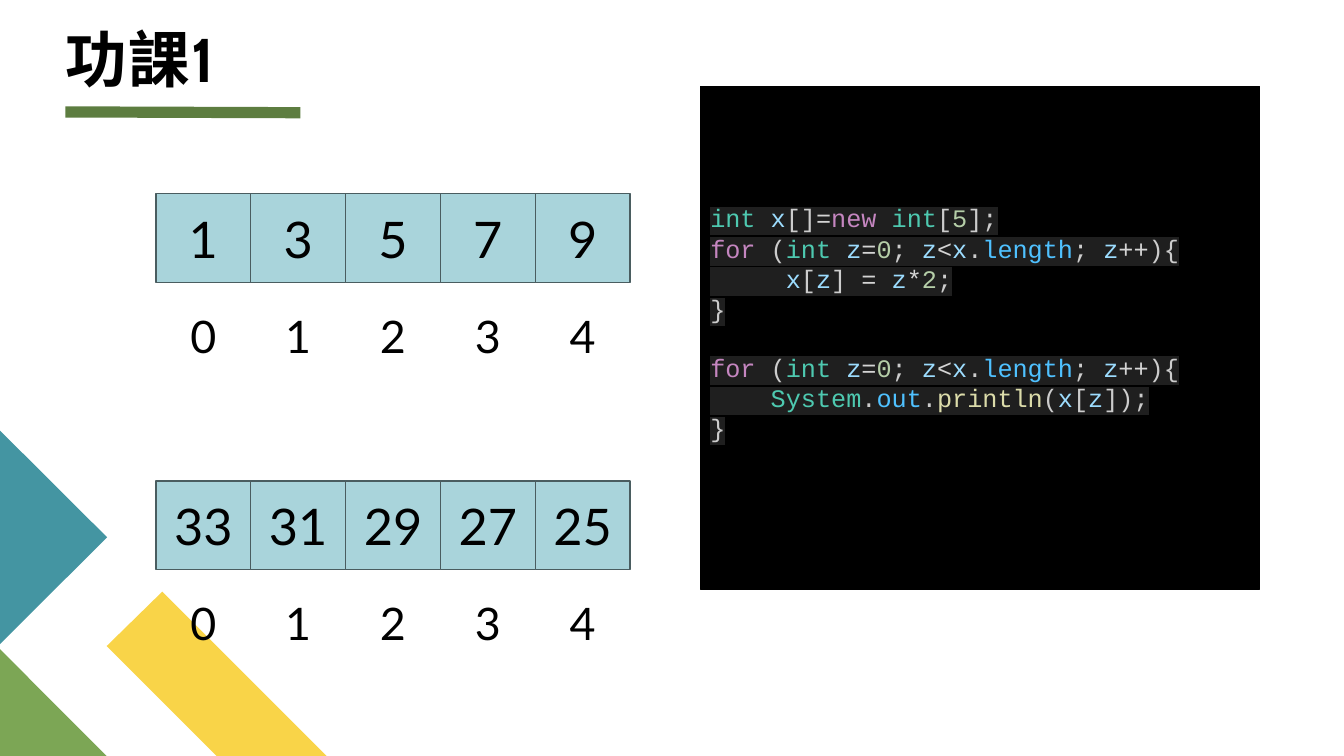
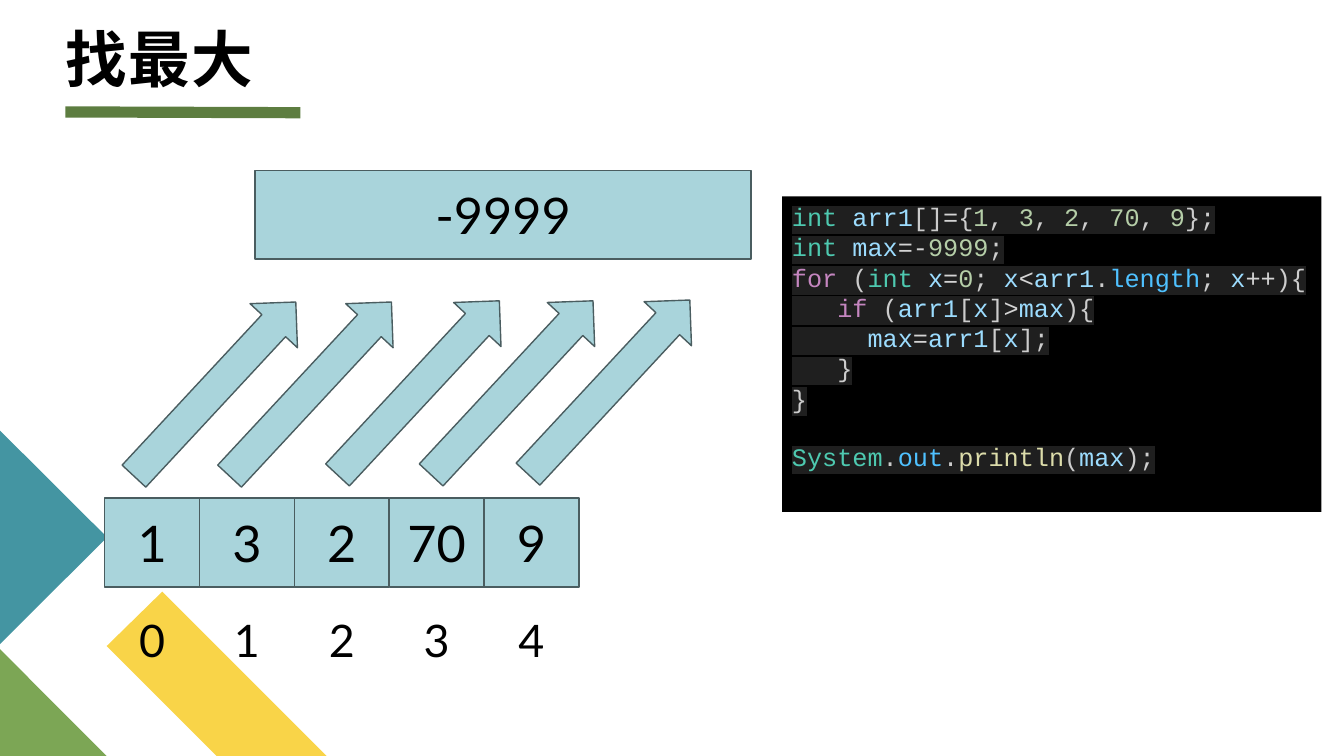
from itertools import groupby

from lxml.etree import SubElement
from pptx import Presentation
from pptx.dml.color import RGBColor
from pptx.enum.shapes import MSO_CONNECTOR, MSO_SHAPE
from pptx.enum.text import MSO_ANCHOR, MSO_AUTO_SIZE, PP_ALIGN
from pptx.oxml.ns import qn
from pptx.util import Cm, Pt

BLACK = RGBColor(0x00, 0x00, 0x00)
TEAL = RGBColor(0x44, 0x95, 0xA2)
YELLOW = RGBColor(0xF9, 0xD4, 0x48)
GREEN = RGBColor(0x7C, 0xA6, 0x55)
DARK_GREEN = RGBColor(0x5D, 0x7D, 0x40)
PALE_BLUE = RGBColor(0xA9, 0xD4, 0xDB)
SLATE = RGBColor(0x4A, 0x5D, 0x60)

CODE_BACK = RGBColor(0x1F, 0x1F, 0x1F)
CODE_TYPE = RGBColor(0x4E, 0xC9, 0xB0)
CODE_KEYWORD = RGBColor(0xC5, 0x86, 0xC0)
CODE_MEMBER = RGBColor(0x4F, 0xC1, 0xFF)
CODE_METHOD = RGBColor(0xDC, 0xDC, 0xAA)
CODE_NUMBER = RGBColor(0xB5, 0xCE, 0xA8)
CODE_VARIABLE = RGBColor(0x9C, 0xDC, 0xFE)
CODE_OPERATOR = RGBColor(0xD4, 0xD4, 0xD4)
CODE_MARK = RGBColor(0xCC, 0xCC, 0xCC)
WORD_COLOURS = {
    "int": CODE_TYPE, "System": CODE_TYPE,
    "for": CODE_KEYWORD, "if": CODE_KEYWORD, "new": CODE_KEYWORD,
    "length": CODE_MEMBER, "out": CODE_MEMBER, "println": CODE_METHOD,
}

TITLE_FONT, BODY_FONT, CODE_FONT = "Cabin", "Lato", "Courier New"
CELL_WIDTH, CELL_HEIGHT = 2.39, 2.24
INDEX_DROP, INDEX_HEIGHT = 2.77, 1.63
CODE_LINE = Pt(20.4)

DECOR = [
    (YELLOW, [(8.23, 19.05), (5.46, 19.05), (2.69, 16.28), (4.09, 14.91)]),
    (GREEN, [(0, 16.36), (2.69, 19.05), (0, 19.05)]),
    (TEAL, [(0, 10.85), (2.7, 13.54), (0, 16.23)]),
]
ARROWS = [(4.6, 6.81), (7.01, 6.81), (9.73, 6.78), (12.09, 6.78), (14.53, 6.76)]

FILL_CODE = """int x[]=new int[5];
for (int z=0; z<x.length; z++){
     x[z] = z*2;
}

for (int z=0; z<x.length; z++){
    System.out.println(x[z]);
}"""
MAX_CODE = """int arr1[]={1, 3, 2, 70, 9};
int max=-9999;
for (int x=0; x<arr1.length; x++){
   if (arr1[x]>max){
     max=arr1[x];
   }
}

System.out.println(max);"""


def add_span(para, text, size=36, font=BODY_FONT, colour=BLACK, bold=False,
             highlight=None, tracking=None):
    """Append one formatted run to a paragraph."""
    span = para.add_run()
    span.text = text
    span.font.size = Pt(size)
    span.font.name = font
    span.font.bold = bold
    span.font.color.rgb = colour
    props = span.font._element
    if tracking:
        props.set("spc", str(tracking))
    if highlight:
        mark = SubElement(props, qn("a:highlight"))
        SubElement(mark, qn("a:srgbClr")).set("val", str(highlight))
        props.find(qn("a:solidFill")).addnext(mark)


def paint(shape, fill, line=None):
    """Give a shape a flat fill and an optional thin outline."""
    shape.shadow.inherit = False
    shape.fill.solid()
    shape.fill.fore_color.rgb = fill
    if line is None:
        shape.line.fill.background()
    else:
        shape.line.color.rgb = line
        shape.line.width = Pt(1)


def add_shape(page, kind, left, top, width, height, fill=PALE_BLUE, line=SLATE):
    """Draw a painted preset shape, measured in centimetres."""
    shape = page.shapes.add_shape(kind, Cm(left), Cm(top), Cm(width), Cm(height))
    paint(shape, fill, line)
    return shape


def add_value(page, text, left, top, width=CELL_WIDTH):
    """Draw a pale box that holds one centred value."""
    box = add_shape(page, MSO_SHAPE.RECTANGLE, left, top, width, CELL_HEIGHT)
    box.text_frame.vertical_anchor = MSO_ANCHOR.MIDDLE
    para = box.text_frame.paragraphs[0]
    para.alignment = PP_ALIGN.CENTER
    add_span(para, text)


def add_array(page, values, left, top):
    """Draw a row of values with their indices below."""
    for index, value in enumerate(values):
        cell_left = left + index * CELL_WIDTH
        add_value(page, str(value), cell_left, top)
        label = page.shapes.add_textbox(Cm(cell_left), Cm(top + INDEX_DROP),
                                        Cm(CELL_WIDTH), Cm(INDEX_HEIGHT))
        label.text_frame.word_wrap = True
        para = label.text_frame.paragraphs[0]
        para.alignment = PP_ALIGN.CENTER
        add_span(para, str(index), size=32)


def token_kind(letter):
    """Sort a code character into word, operator or mark."""
    if letter.isalnum():
        return "word"
    return "operator" if letter in "=<>+-*" else "mark"


def token_colour(kind, token):
    """Choose the syntax colour of a code token."""
    if kind == "word":
        default = CODE_NUMBER if token.isdigit() else CODE_VARIABLE
        return WORD_COLOURS.get(token, default)
    return CODE_OPERATOR if kind == "operator" else CODE_MARK


def add_code(page, code, left, top, width, height, anchor, bottom=0.13, line=None):
    """Draw a black panel with highlighted source code."""
    panel = add_shape(page, MSO_SHAPE.RECTANGLE, left, top, width, height,
                      fill=BLACK, line=line)
    frame = panel.text_frame
    frame.word_wrap = True
    frame.vertical_anchor = anchor
    frame.margin_bottom = Cm(bottom)
    para = frame.paragraphs[0]
    for block_number, block in enumerate(code.split("\n\n")):
        for line_number, text in enumerate(block.split("\n")):
            if block_number or line_number:
                para = frame.add_paragraph()
            if block_number and not line_number:
                para.space_before = CODE_LINE
            para.alignment = PP_ALIGN.LEFT
            for kind, letters in groupby(text, token_kind):
                token = "".join(letters)
                add_span(para, token, size=18, font=CODE_FONT,
                         colour=token_colour(kind, token), highlight=CODE_BACK)


def add_decor(page):
    """Draw the title rule and the corner shapes."""
    rule = page.shapes.add_connector(MSO_CONNECTOR.STRAIGHT, Cm(1.65), Cm(2.82),
                                     Cm(7.57), Cm(2.84))
    rule.line.color.rgb = DARK_GREEN
    rule.line.width = Pt(8)
    SubElement(rule._element.spPr, qn("a:effectLst"))
    for colour, corners in DECOR:
        points = [(Cm(x), Cm(y)) for x, y in corners]
        outline = page.shapes.build_freeform(*points[0])
        outline.add_line_segments(points[1:])
        paint(outline.convert_to_shape(), colour)


def add_page(deck, title):
    """Start a slide with the shared decor and title style."""
    page = deck.slides.add_slide(deck.slide_layouts[5])
    add_decor(page)
    box = page.shapes.title
    box.left, box.top, box.width, box.height = Cm(1.65), Cm(0.28), Cm(30.2), Cm(2.11)
    frame = box.text_frame
    frame.margin_left = frame.margin_right = 0
    frame.margin_top = frame.margin_bottom = 0
    frame.auto_size = MSO_AUTO_SIZE.NONE
    frame.vertical_anchor = MSO_ANCHOR.BOTTOM
    para = frame.paragraphs[0]
    para.alignment = PP_ALIGN.LEFT
    para.line_spacing = 0.8
    add_span(para, title, size=44, font=TITLE_FONT, bold=True, tracking=100)
    return page


def add_homework_page(deck):
    """Build the homework slide with two arrays."""
    page = add_page(deck, "功課1")
    add_array(page, range(1, 10, 2), 3.93, 4.88)
    add_array(page, range(33, 24, -2), 3.93, 12.12)
    add_code(page, FILL_CODE, 17.65, 2.18, 14.1, 12.67, MSO_ANCHOR.MIDDLE,
             bottom=0.89, line=BLACK)


def add_maximum_page(deck):
    """Build the slide about finding the largest value."""
    page = add_page(deck, "找最大")
    add_array(page, [1, 3, 2, 70, 9], 2.64, 12.55)
    add_value(page, "-9999", 6.43, 4.29, width=12.5)
    for left, top in ARROWS:
        arrow = add_shape(page, MSO_SHAPE.UP_ARROW, left, top, 1.63, 5.99)
        arrow.rotation = 42.9
    add_code(page, MAX_CODE, 19.71, 4.95, 13.59, 7.95, MSO_ANCHOR.TOP)


def main():
    """Build and save the deck."""
    deck = Presentation()
    deck.slide_width, deck.slide_height = Cm(33.87), Cm(19.05)
    add_homework_page(deck)
    add_maximum_page(deck)
    deck.save("out.pptx")


if __name__ == "__main__":
    main()
